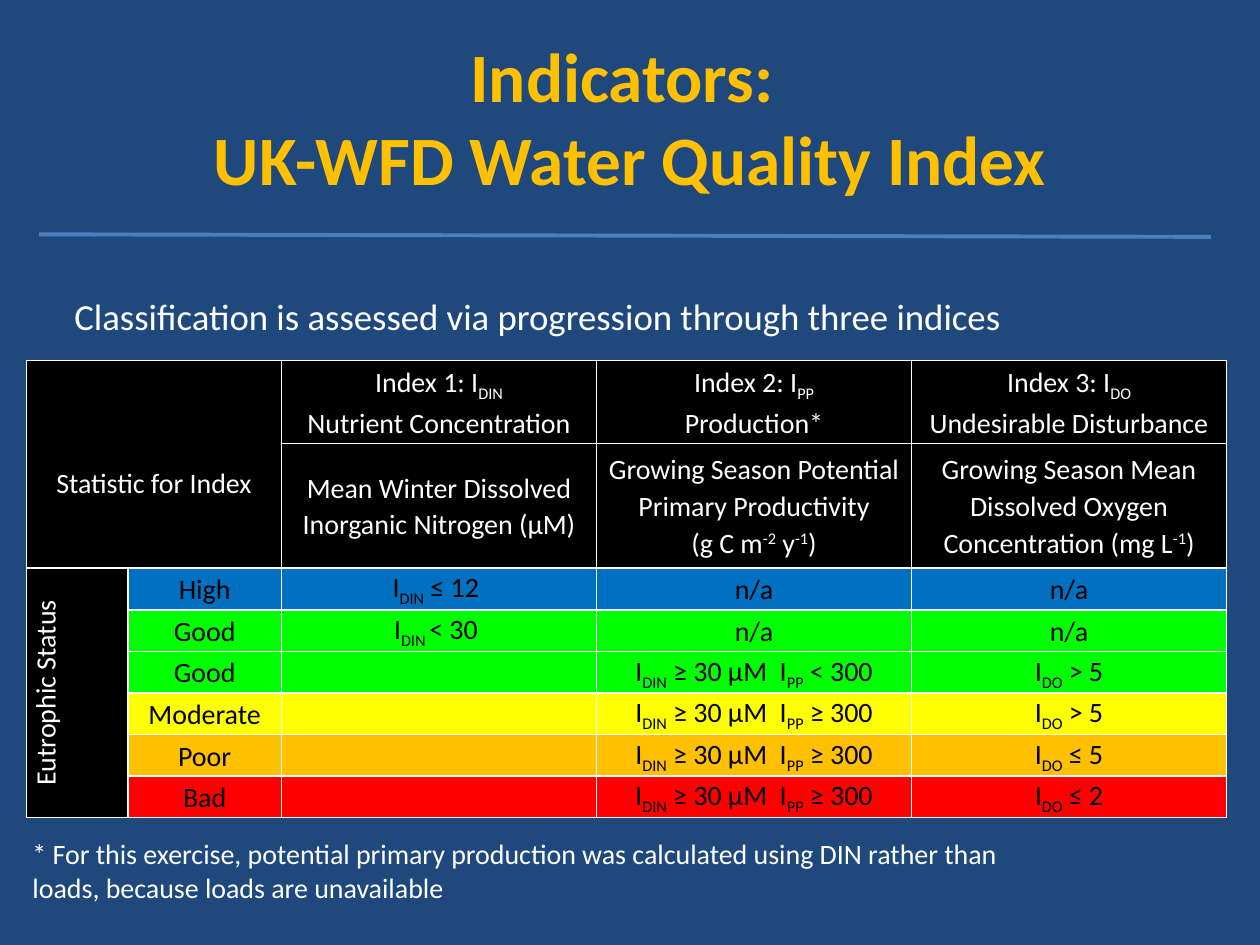
"""Build the UK-WFD water quality index slide with its classification table."""
from lxml import etree
from pptx import Presentation
from pptx.dml.color import RGBColor
from pptx.enum.shapes import MSO_CONNECTOR
from pptx.enum.text import MSO_ANCHOR, PP_ALIGN
from pptx.oxml.ns import qn
from pptx.util import Inches, Pt

STRAIGHT = MSO_CONNECTOR.STRAIGHT
TOP, MIDDLE = MSO_ANCHOR.TOP, MSO_ANCHOR.MIDDLE
LEFT, CENTER = PP_ALIGN.LEFT, PP_ALIGN.CENTER
FONT = "Calibri"
COLORS = {
    "navy": "1F497D", "rule": "4B7EBC", "white": "FFFFFF", "black": "000000",
    "blue": "0070C0", "green": "00FF00", "yellow": "FFFF00",
    "gold": "FFC000", "red": "FF0000",
}

deck = Presentation()
deck.slide_width, deck.slide_height = Inches(10), Inches(7.5)
COLUMN, ROW = deck.slide_width / 100, deck.slide_height / 75
page = deck.slides.add_slide(deck.slide_layouts[6])
page.background.fill.solid()
page.background.fill.fore_color.rgb = RGBColor.from_string(COLORS["navy"])


def grid(left, top, width, height):
    return int(left * COLUMN), int(top * ROW), int(width * COLUMN), int(height * ROW)


def write(frame, text, size=16, color="white", bold=False, align=LEFT, spacing=None, before=None):
    """Lines split at newlines, breaks at vertical tabs; |...| is raised if it starts with a minus, else lowered."""
    frame.word_wrap = True
    for number, line in enumerate(text.split("\n")):
        para = frame.add_paragraph() if number else frame.paragraphs[0]
        para.alignment, para.line_spacing, para.space_before = align, spacing, before
        for part, piece in enumerate(line.split("\v")):
            if part:
                para.add_line_break()
            for index, words in enumerate(piece.split("|")):
                if not words:
                    continue
                span = para.add_run()
                span.text = words
                span.font.name, span.font.size, span.font.bold = FONT, Pt(size), bold
                span.font.color.rgb = RGBColor.from_string(COLORS[color])
                if index % 2:
                    shift = "30000" if words.startswith("-") else "-25000"
                    span.font._element.set("baseline", shift)


title = page.shapes.add_textbox(*grid(5, 3, 90, 12.5)).text_frame
title.vertical_anchor = MIDDLE
write(title, "Indicators: \vUK-WFD Water Quality Index", size=39.6, color="gold", bold=True, align=CENTER)

HEADINGS = [
    ["Statistic for Index", "", "Index 1: I|DIN|\nNutrient Concentration",
     "Index 2: I|PP|\nProduction*", "Index 3: I|DO|\nUndesirable Disturbance"],
    ["", "", "Mean Winter Dissolved Inorganic Nitrogen (µM)",
     "Growing Season Potential Primary Productivity\n(g C m|-2| y|-1|)",
     "Growing Season Mean Dissolved Oxygen Concentration (mg L|-1|)"],
]
HIGH_PRODUCTION = "I|DIN| ≥ 30 µM  I|PP| ≥ 300"
STATUSES = [
    ("blue", ["Eutrophic Status", "High", "I|DIN| ≤ 12 ", "n/a", "n/a"]),
    ("green", ["", "Good", "I|DIN |< 30 ", "n/a", "n/a"]),
    ("green", ["", "Good", "", "I|DIN| ≥ 30 µM  I|PP| < 300", "I|DO| > 5"]),
    ("yellow", ["", "Moderate", "", HIGH_PRODUCTION, "I|DO| > 5"]),
    ("gold", ["", "Poor", "", HIGH_PRODUCTION, "I|DO| ≤ 5"]),
    ("red", ["", "Bad", "", HIGH_PRODUCTION, "I|DO| ≤ 2"]),
]
rows = [("black", texts) for texts in HEADINGS] + STATUSES
widths = [8.05, 12.2] + [25] * 3
heights = [6.6, 9.9] + [3.3] * 6

table = page.shapes.add_table(
    len(rows), len(widths), *grid(2.1, 28.6, sum(widths), sum(heights))).table
table.first_row = table.horz_banding = False
for column, width in zip(table.columns, widths):
    column.width = int(width * COLUMN)
for row, height in zip(table.rows, heights):
    row.height = int(height * ROW)
table.cell(0, 0).merge(table.cell(1, 1))
table.cell(2, 0).merge(table.cell(7, 0))

for row_number, (band, texts) in enumerate(rows):
    for column_number, text in enumerate(texts):
        cell = table.cell(row_number, column_number)
        fill = "black" if column_number == 0 else band
        cell.margin_left = cell.margin_right = int(0.6 * COLUMN)
        cell.margin_top = cell.margin_bottom = 0
        cell.vertical_anchor = MIDDLE
        properties = cell._tc.get_or_add_tcPr()
        for side in ("lnL", "lnR", "lnT", "lnB"):
            border = etree.SubElement(properties, qn(f"a:{side}"), w=str(Pt(1)))
            paint = etree.SubElement(border, qn("a:solidFill"))
            etree.SubElement(paint, qn("a:srgbClr"), val=COLORS["white"])
        cell.fill.solid()
        cell.fill.fore_color.rgb = RGBColor.from_string(COLORS[fill])
        if text:
            write(cell.text_frame, text, color="white" if fill == "black" else "black",
                  align=CENTER, spacing=1.07)
table.cell(0, 0).margin_top = int(2.9 * ROW)
table.cell(2, 0)._tc.tcPr.set("vert", "vert270")

intro = page.shapes.add_textbox(*grid(5.2, 23.3, 86.2, 7.1)).text_frame
intro.margin_left = intro.margin_right = int(0.7 * COLUMN)
intro.margin_top = intro.margin_bottom = int(0.4 * ROW)
intro.vertical_anchor = TOP
write(intro, "Classification is assessed via progression through three indices",
      size=21, spacing=0.9, before=Pt(10))

rule = page.shapes.add_connector(STRAIGHT, *grid(3.1, 18.6, 96.1, 18.8))
rule.line.color.rgb = RGBColor.from_string(COLORS["rule"])
rule.line.width = Pt(2.25)
etree.SubElement(rule._element.spPr, qn("a:effectLst"))

footnote = page.shapes.add_textbox(*grid(1.6, 65.9, 84, 6.4)).text_frame
write(footnote, "* For this exercise, potential primary production was calculated using DIN "
      "rather than loads, because loads are unavailable")

deck.save("out.pptx")
